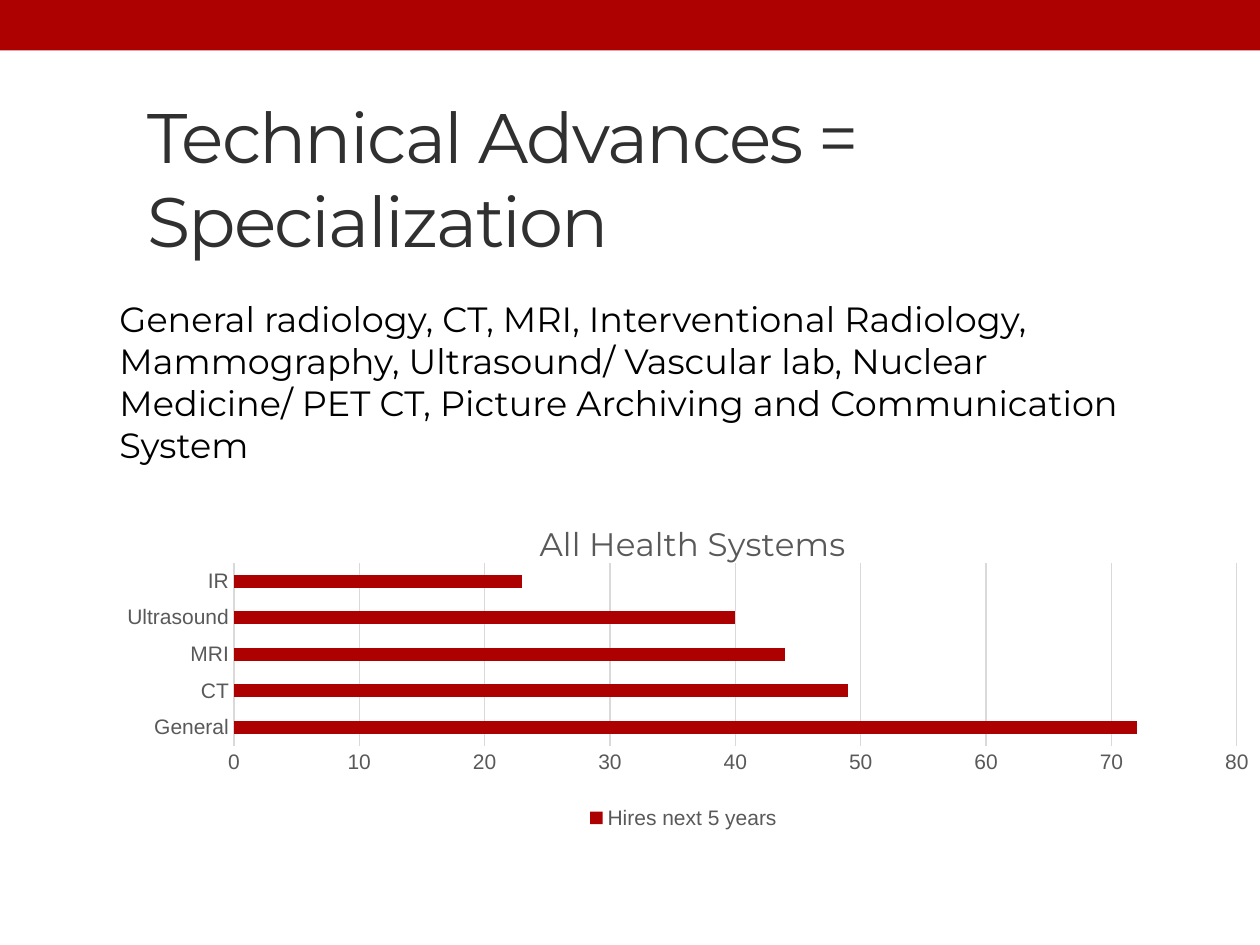
import pptx
import pptx.chart.data
import pptx.dml.color
import pptx.enum.chart
import pptx.enum.shapes
import pptx.enum.text
import pptx.oxml
import pptx.oxml.ns
import pptx.util

TITLE = "Technical Advances = Specialization"
BODY = (
    "General radiology, CT, MRI, Interventional Radiology, Mammography, "
    "Ultrasound/ Vascular lab, Nuclear Medicine/ PET CT, "
    "Picture Archiving and Communication System"
)
CHART_TITLE = "All Health Systems"
SERIES_NAME = "Hires next 5 years"
HIRES = {"General": 72, "CT": 49, "MRI": 44, "Ultrasound": 40, "IR": 23}

THEME = {
    "accent": "AD0101", "title": "303030", "body": "000000",
    "label": "595959", "grid": "D9D9D9",
    "text_font": "Montserrat", "chart_font": "Arial",
    "title_size": 40, "body_size": 20, "chart_title_size": 18.6, "label_size": 12,
}

# Inches: left, top, width, height
SLIDE_WIDTH, SLIDE_HEIGHT = 10, 7.5
MARGIN = 0.85
BAND_BOX = (0, 0, SLIDE_WIDTH, 0.4)
TITLE_BOX = (1.07, 0.5, 8.43, 1.81)
BODY_BOX = (MARGIN, 2.31, 8.3, 1.4)
CHART_BOX = (MARGIN, 3.93, SLIDE_WIDTH - MARGIN, 2.69)
# Shares of the chart's size
PLOT_LAYOUT = {"x": 0.11, "y": 0.2, "w": 0.87, "h": 0.54}
CHART_TITLE_LAYOUT = {"x": 0.37, "y": 0.06}


def color(name):
    return pptx.dml.color.RGBColor.from_string(THEME[name])


def inches(box):
    return [pptx.util.Inches(length) for length in box]


def style_font(font, family, size, color_name):
    font.name = THEME[family]
    font.size = pptx.util.Pt(THEME[size])
    font.color.rgb = color(color_name)
    font.bold = False


def add_text(slide, box, text, size, color_name, anchor):
    text_frame = slide.shapes.add_textbox(*inches(box)).text_frame
    text_frame.word_wrap = True
    text_frame.vertical_anchor = anchor
    text_frame.text = text
    run = text_frame.paragraphs[0].runs[0]
    style_font(run.font, "text_font", size, color_name)
    return run


def manual_layout(shares, inner=False):
    """Return a c:layout element that places a chart part by shares."""
    target = '<c:layoutTarget val="inner"/>' if inner else ""
    modes = "".join(f'<c:{key}Mode val="edge"/>' for key in "xy")
    values = "".join(f'<c:{key} val="{share}"/>' for key, share in shares.items())
    return pptx.oxml.parse_xml(
        f'<c:layout {pptx.oxml.ns.nsdecls("c")}><c:manualLayout>'
        f"{target}{modes}{values}</c:manualLayout></c:layout>"
    )


def replace_layout(parent, layout, position):
    for old in parent.findall(pptx.oxml.ns.qn("c:layout")):
        parent.remove(old)
    parent.insert(position, layout)


def style_line(line):
    line.color.rgb = color("grid")
    line.width = pptx.util.Pt(0.75)


def add_hires_chart(slide):
    data = pptx.chart.data.CategoryChartData()
    data.categories = list(HIRES)
    data.add_series(SERIES_NAME, list(HIRES.values()))
    chart = slide.shapes.add_chart(
        pptx.enum.chart.XL_CHART_TYPE.BAR_STACKED, *inches(CHART_BOX), data
    ).chart
    style_font(chart.font, "chart_font", "label_size", "label")

    chart.has_title = True
    title_frame = chart.chart_title.text_frame
    title_frame.text = CHART_TITLE
    style_font(title_frame.paragraphs[0].runs[0].font,
               "text_font", "chart_title_size", "label")
    replace_layout(chart.chart_title._element,
                   manual_layout(CHART_TITLE_LAYOUT), 1)

    chart.has_legend = True
    chart.legend.position = pptx.enum.chart.XL_LEGEND_POSITION.BOTTOM
    chart.legend.include_in_layout = False
    style_font(chart.legend.font, "chart_font", "label_size", "label")

    for axis in (chart.category_axis, chart.value_axis):
        axis.major_tick_mark = pptx.enum.chart.XL_TICK_MARK.NONE
        axis.minor_tick_mark = pptx.enum.chart.XL_TICK_MARK.NONE
        style_font(axis.tick_labels.font, "chart_font", "label_size", "label")
    style_line(chart.category_axis.format.line)
    chart.value_axis.format.line.fill.background()
    chart.value_axis.has_major_gridlines = True
    style_line(chart.value_axis.major_gridlines.format.line)
    chart.value_axis.minimum_scale = 0
    chart.value_axis.maximum_scale = 80
    chart.value_axis.major_unit = 10

    plot = chart.plots[0]
    plot.gap_width = 182
    plot.overlap = 100
    plot.vary_by_categories = False
    fill = plot.series[0].format.fill
    fill.solid()
    fill.fore_color.rgb = color("accent")
    replace_layout(plot._element.getparent(),
                   manual_layout(PLOT_LAYOUT, inner=True), 0)


def main():
    presentation = pptx.Presentation()
    presentation.slide_width = pptx.util.Inches(SLIDE_WIDTH)
    presentation.slide_height = pptx.util.Inches(SLIDE_HEIGHT)
    slide = presentation.slides.add_slide(presentation.slide_layouts[6])

    band = slide.shapes.add_shape(
        pptx.enum.shapes.MSO_SHAPE.RECTANGLE, *inches(BAND_BOX)
    )
    band.shadow.inherit = False
    band.fill.solid()
    band.fill.fore_color.rgb = color("accent")
    band.line.fill.background()

    anchors = pptx.enum.text.MSO_ANCHOR
    title = add_text(slide, TITLE_BOX, TITLE, "title_size", "title", anchors.MIDDLE)
    title.font._element.set("spc", "-100")
    add_text(slide, BODY_BOX, BODY, "body_size", "body", anchors.TOP)
    add_hires_chart(slide)

    presentation.save("out.pptx")


if __name__ == "__main__":
    main()
